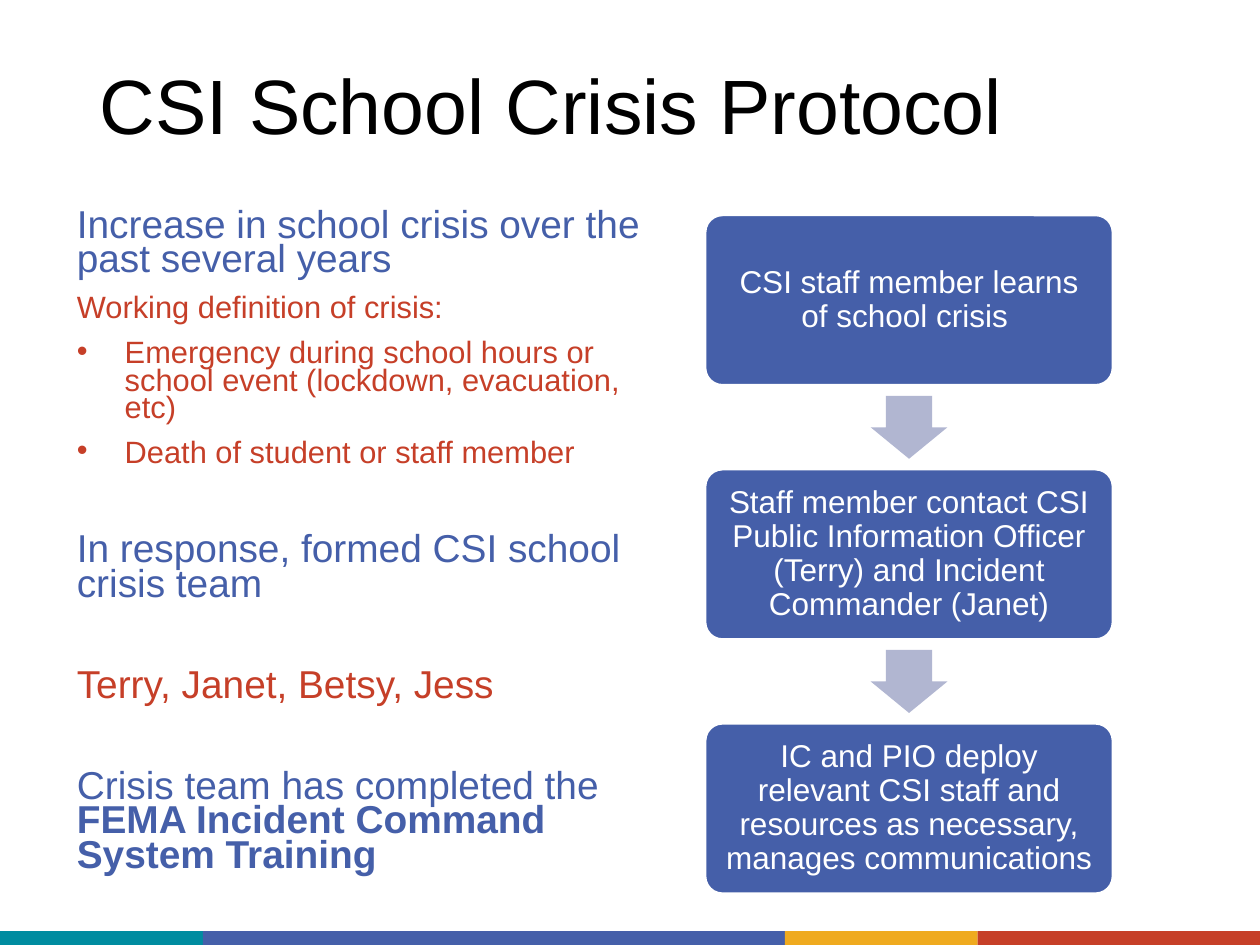
import pptx
import pptx.util
import pptx.dml.color
import pptx.enum.shapes
import pptx.enum.text
import pptx.oxml.ns
from lxml import etree
from pptx.util import Inches, Pt

SHAPES = pptx.enum.shapes.MSO_SHAPE
ALIGN = pptx.enum.text.PP_ALIGN
ANCHOR = pptx.enum.text.MSO_ANCHOR
BLUE, RED, TEAL, GOLD = "455FA9", "C63F28", "008CA0", "EFAA1F"
WHITE, BLACK, LILAC = "FFFFFF", "000000", "B1B6D1"

LARGE, SMALL = 22.2, 17.6
CLOSE, APART = 10, 38
POINTS = [
    (["Increase in school crisis over the past several years"], LARGE, BLUE, 0, False),
    (["Working definition of crisis: "], SMALL, RED, CLOSE, False),
    (["Emergency during school hours or school event (lockdown, evacuation, etc) "],
     SMALL, RED, CLOSE, True),
    (["Death of student or staff member "], SMALL, RED, CLOSE, True),
    (["In response, formed CSI school crisis team"], LARGE, BLUE, APART, False),
    (["Terry, Janet, Betsy, Jess"], LARGE, RED, APART, False),
    (["Crisis team has completed the ", "FEMA Incident Command System Training"],
     LARGE, BLUE, APART, False),
]
STEPS = [
    "CSI staff member learns of school crisis ",
    "Staff member contact CSI Public Information Officer (Terry) and Incident Commander (Janet)",
    "IC and PIO deploy relevant CSI staff and resources as necessary, manages communications ",
]
STRIPES = [(TEAL, 1.61), (BLUE, 4.62), (GOLD, 1.53), (RED, 2.24)]


def colour(value):
    return pptx.dml.color.RGBColor.from_string(value)


def style(span, size, value, bold=False):
    span.font.name = "Arial"
    span.font.size = Pt(size)
    span.font.bold = bold
    span.font.color.rgb = colour(value)


def place(shape, box):
    shape.left, shape.top, shape.width, shape.height = (Inches(length) for length in box)


def add_block(page, kind, box, fill):
    shape = page.shapes.add_shape(kind, *(Inches(length) for length in box))
    shape.shadow.inherit = False
    shape.fill.solid()
    shape.fill.fore_color.rgb = colour(fill)
    shape.line.fill.background()
    return shape


def set_bullet(para, bulleted):
    properties = para._p.get_or_add_pPr()
    indent = Inches(0.38) if bulleted else 0
    properties.set("marL", str(indent))
    properties.set("indent", str(-indent))
    if bulleted:
        font = etree.SubElement(properties, pptx.oxml.ns.qn("a:buFont"))
        font.set("typeface", "Arial")
    mark = etree.SubElement(
        properties, pptx.oxml.ns.qn("a:buChar" if bulleted else "a:buNone"))
    if bulleted:
        mark.set("char", "•")


def fill_title(page, box):
    title = page.shapes.title
    place(title, box)
    title.text_frame.text = "CSI School Crisis Protocol"
    title.text_frame.vertical_anchor = ANCHOR.MIDDLE
    para = title.text_frame.paragraphs[0]
    para.alignment = ALIGN.LEFT
    para.line_spacing = 0.9
    style(para.runs[0], 44, BLACK)


def fill_points(page, box):
    body = page.placeholders[1]
    place(body, box)
    frame = body.text_frame
    frame.auto_size = pptx.enum.text.MSO_AUTO_SIZE.NONE
    frame.text = "\n".join("" for point in POINTS)
    for para, (texts, size, value, before, bulleted) in zip(frame.paragraphs, POINTS):
        set_bullet(para, bulleted)
        para.line_spacing = 0.74
        para.space_before = Pt(before)
        for index, text in enumerate(texts):
            span = para.add_run()
            span.text = text
            style(span, size, value, bold=index > 0)


def add_steps(page, box):
    left, top, width, height = box
    step_height = height / 4
    pitch = (height - step_height) / (len(STEPS) - 1)
    gap = pitch - step_height
    arrow_width, arrow_height = 0.61, 0.5
    for index, text in enumerate(STEPS):
        step_top = top + index * pitch
        step = add_block(page, SHAPES.ROUNDED_RECTANGLE,
                         (left, step_top, width, step_height), BLUE)
        step.adjustments[0] = 0.1
        step.line.color.rgb = colour(WHITE)
        step.line.width = Pt(1)
        frame = step.text_frame
        frame.word_wrap = True
        frame.vertical_anchor = ANCHOR.MIDDLE
        frame.margin_left = frame.margin_right = Inches(0.11)
        frame.margin_top = frame.margin_bottom = Inches(0.11)
        frame.text = text
        para = frame.paragraphs[0]
        para.alignment = ALIGN.CENTER
        para.line_spacing = 0.9
        style(para.runs[0], 18, WHITE)
        if index < len(STEPS) - 1:
            arrow = add_block(page, SHAPES.DOWN_ARROW,
                              (left + (width - arrow_width) / 2,
                               step_top + step_height + (gap - arrow_height) / 2,
                               arrow_width, arrow_height), LILAC)
            arrow.adjustments[0] = 0.6
            arrow.adjustments[1] = 0.5


def add_stripes(page, box):
    left, top, width, height = box
    total = sum(share for fill, share in STRIPES)
    for fill, share in STRIPES:
        stripe = width * share / total
        add_block(page, SHAPES.RECTANGLE, (left, top, stripe, height), fill)
        left += stripe


def main():
    deck = pptx.Presentation()
    deck.slide_width, deck.slide_height = Inches(10), Inches(7.5)
    page = deck.slides.add_slide(deck.slide_layouts[1])
    add_stripes(page, (0, 7.39, 10, 0.11))
    fill_title(page, (0.69, 0.4, 8.62, 0.94))
    fill_points(page, (0.51, 1.62, 4.93, 5.64))
    add_steps(page, (5.6, 1.71, 3.23, 5.38))
    deck.save("out.pptx")


if __name__ == "__main__":
    main()
